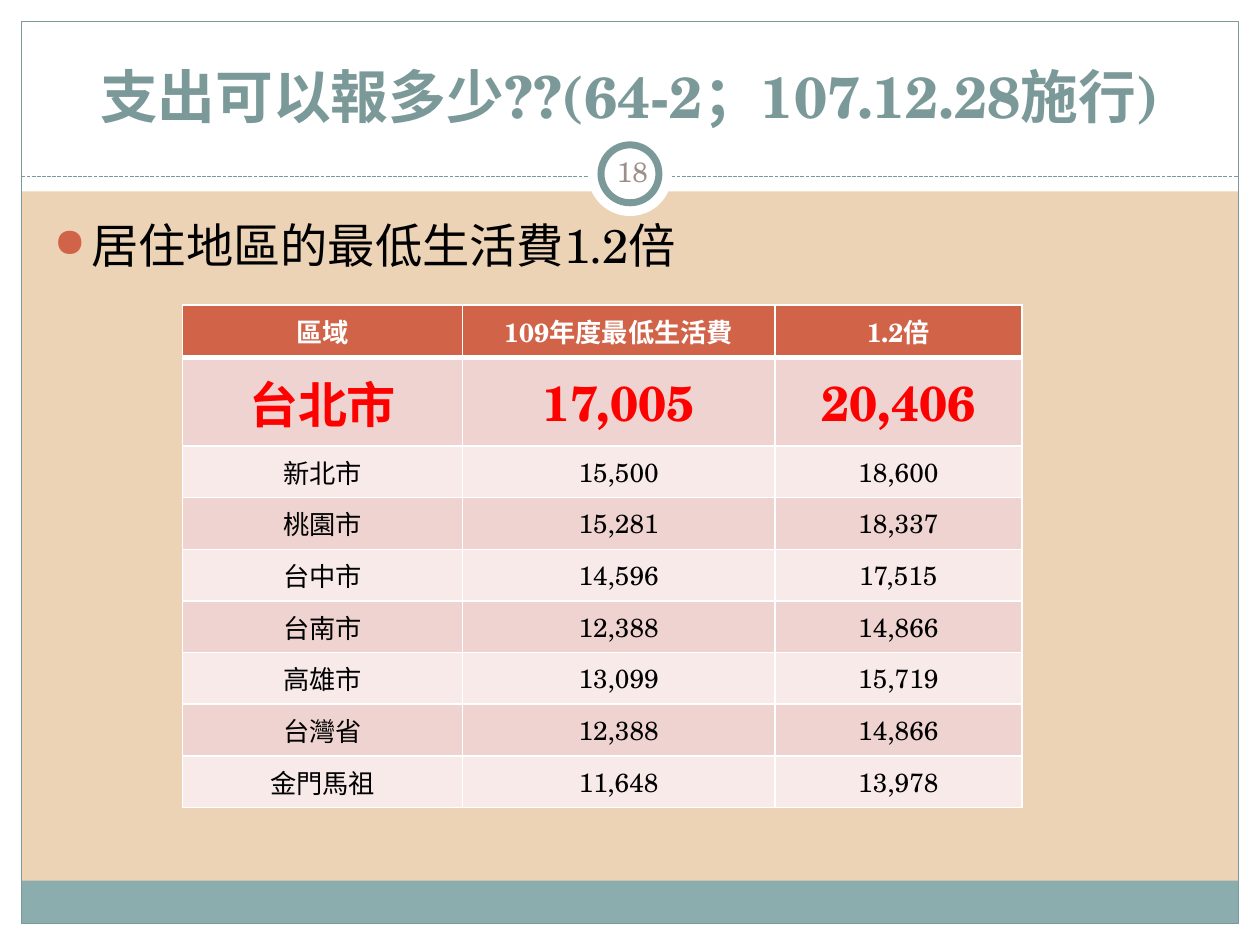
from lxml.etree import SubElement
from pptx import Presentation
from pptx.dml.color import RGBColor
from pptx.enum.dml import MSO_LINE
from pptx.enum.shapes import MSO_CONNECTOR, MSO_SHAPE
from pptx.enum.text import MSO_ANCHOR, PP_ALIGN
from pptx.oxml.ns import qn
from pptx.util import Inches, Pt

TITLE = "支出可以報多少??(64-2；107.12.28施行)"
BULLET = "居住地區的最低生活費1.2倍"
PAGE_NUMBER = "18"
HEADER = ("區域", "109年度最低生活費", "1.2倍")
LIVING_COSTS = [
    ("台北市", "17,005", "20,406"),
    ("新北市", "15,500", "18,600"),
    ("桃園市", "15,281", "18,337"),
    ("台中市", "14,596", "17,515"),
    ("台南市", "12,388", "14,866"),
    ("高雄市", "13,099", "15,719"),
    ("台灣省", "12,388", "14,866"),
    ("金門馬祖", "11,648", "13,978"),
]

FONT = "TeX Gyre Schola"
COLORS = {
    "sand": "EDD3B6", "white": "FFFFFF", "teal": "7C999A", "footer": "8CADAE",
    "accent": "D16349", "band dark": "EED3D0", "band light": "F7EAE9",
    "highlight": "FF0000", "black": "000000", "number": "9D8F88",
}
WIDTH, HEIGHT, MARGIN = 10, 7.5, 0.17
INNER_WIDTH = WIDTH - 2 * MARGIN
INNER_HEIGHT = HEIGHT - 2 * MARGIN
TITLE_BAND, RULE_TOP, FOOTER_HEIGHT = 1.52, 1.4, 0.34
BADGE_CENTER = 1.38
COLUMN_WIDTHS = (2.22, 2.48, 1.96)
ROW_HEIGHTS = [0.42, 0.7] + [0.41] * (len(LIVING_COSTS) - 1)


def color(name):
    return RGBColor.from_string(COLORS[name])


def add_box(slide, kind, left, top, width, height, fill=None, line=None, weight=0.75):
    shape = slide.shapes.add_shape(kind, *map(Inches, (left, top, width, height)))
    shape.shadow.inherit = False
    for part, name in ((shape.fill, fill), (shape.line.fill, line)):
        if name:
            part.solid()
            part.fore_color.rgb = color(name)
        else:
            part.background()
    if line:
        shape.line.width = Pt(weight)
    return shape


def write(text_frame, text, size, name, bold=False, align=PP_ALIGN.CENTER):
    text_frame.text = text
    paragraph = text_frame.paragraphs[0]
    paragraph.alignment = align
    font = paragraph.runs[0].font
    font.name, font.size, font.bold = FONT, Pt(size), bold
    font.color.rgb = color(name)
    return paragraph


def add_text(slide, box, anchor, *style, **options):
    text_frame = slide.shapes.add_textbox(*map(Inches, box)).text_frame
    text_frame.word_wrap = True
    text_frame.vertical_anchor = anchor
    return write(text_frame, *style, **options)


def add_bullet(paragraph):
    paragraph.space_before = Pt(5.4)
    properties = paragraph._p.get_or_add_pPr()
    properties.set("marL", str(Inches(0.3)))
    properties.set("indent", str(Inches(-0.3)))
    bullet_color = SubElement(properties, qn("a:buClr"))
    SubElement(bullet_color, qn("a:srgbClr"), val=COLORS["accent"])
    SubElement(properties, qn("a:buSzPct"), val="85000")
    SubElement(properties, qn("a:buChar"), char="●")


def set_borders(cell, bottom=1):
    """Draw white cell borders; they must come before the cell's fill in the XML."""
    properties = cell._tc.get_or_add_tcPr()
    for side, weight in (("L", 1), ("R", 1), ("T", 1), ("B", bottom)):
        border = SubElement(properties, qn(f"a:ln{side}"), w=str(Pt(weight)))
        fill = SubElement(border, qn("a:solidFill"))
        SubElement(fill, qn("a:srgbClr"), val=COLORS["white"])


def row_style(row):
    """Return fill, text size, text colour and boldness of a table row."""
    if row == 0:
        return "accent", 15, "white", True
    if row == 1:
        return "band dark", 28, "highlight", True
    return ("band dark" if row % 2 else "band light"), 15, "black", False


def add_frame(slide):
    rectangle = MSO_SHAPE.RECTANGLE
    for box in ((0, HEIGHT - MARGIN, WIDTH, MARGIN), (0, 0, WIDTH, TITLE_BAND),
                (0, 0, MARGIN, HEIGHT), (WIDTH - MARGIN, 0, MARGIN, HEIGHT)):
        add_box(slide, rectangle, *box, fill="white")
    add_box(slide, rectangle, MARGIN, HEIGHT - MARGIN - FOOTER_HEIGHT,
            INNER_WIDTH, FOOTER_HEIGHT, fill="footer")
    add_box(slide, rectangle, MARGIN, MARGIN, INNER_WIDTH, INNER_HEIGHT, line="teal")

    rule = slide.shapes.add_connector(
        MSO_CONNECTOR.STRAIGHT,
        *map(Inches, (MARGIN, RULE_TOP, WIDTH - MARGIN, RULE_TOP)))
    rule.line.color.rgb = color("teal")
    rule.line.width = Pt(0.75)
    rule.line.dash_style = MSO_LINE.SQUARE_DOT
    SubElement(rule._element.spPr, qn("a:effectLst"))

    for diameter, line in ((0.67, None), (0.46, "teal")):
        add_box(slide, MSO_SHAPE.OVAL, (WIDTH - diameter) / 2,
                BADGE_CENTER - diameter / 2, diameter, diameter,
                fill="white", line=line, weight=4)


def add_cost_table(slide):
    rows = [HEADER] + LIVING_COSTS
    table = slide.shapes.add_table(
        len(rows), len(HEADER), Inches(1.45), Inches(2.42),
        Inches(sum(COLUMN_WIDTHS)), Inches(sum(ROW_HEIGHTS))).table
    for column, width in zip(table.columns, COLUMN_WIDTHS):
        column.width = Inches(width)
    for row, (values, height) in enumerate(zip(rows, ROW_HEIGHTS)):
        table.rows[row].height = Inches(height)
        fill, *text_style = row_style(row)
        for column, value in enumerate(values):
            cell = table.cell(row, column)
            set_borders(cell, bottom=3 if row == 0 else 1)
            cell.fill.solid()
            cell.fill.fore_color.rgb = color(fill)
            cell.vertical_anchor = MSO_ANCHOR.MIDDLE
            write(cell.text_frame, value, *text_style)


def main():
    presentation = Presentation()
    presentation.slide_width, presentation.slide_height = Inches(WIDTH), Inches(HEIGHT)
    slide = presentation.slides.add_slide(presentation.slide_layouts[6])
    slide.background.fill.solid()
    slide.background.fill.fore_color.rgb = color("sand")

    add_frame(slide)
    add_text(slide, (0.33, 0.25, 9.33, 0.83), MSO_ANCHOR.BOTTOM,
             TITLE, 33, "teal", bold=True)
    add_bullet(add_text(slide, (0.33, 1.67, 9.3, 5), MSO_ANCHOR.TOP,
                        BULLET, 27, "black", align=PP_ALIGN.LEFT))
    add_cost_table(slide)
    add_text(slide, (4.77, 1.12, 0.5, 0.48), MSO_ANCHOR.MIDDLE,
             PAGE_NUMBER, 16, "number")
    presentation.save("out.pptx")


if __name__ == "__main__":
    main()
